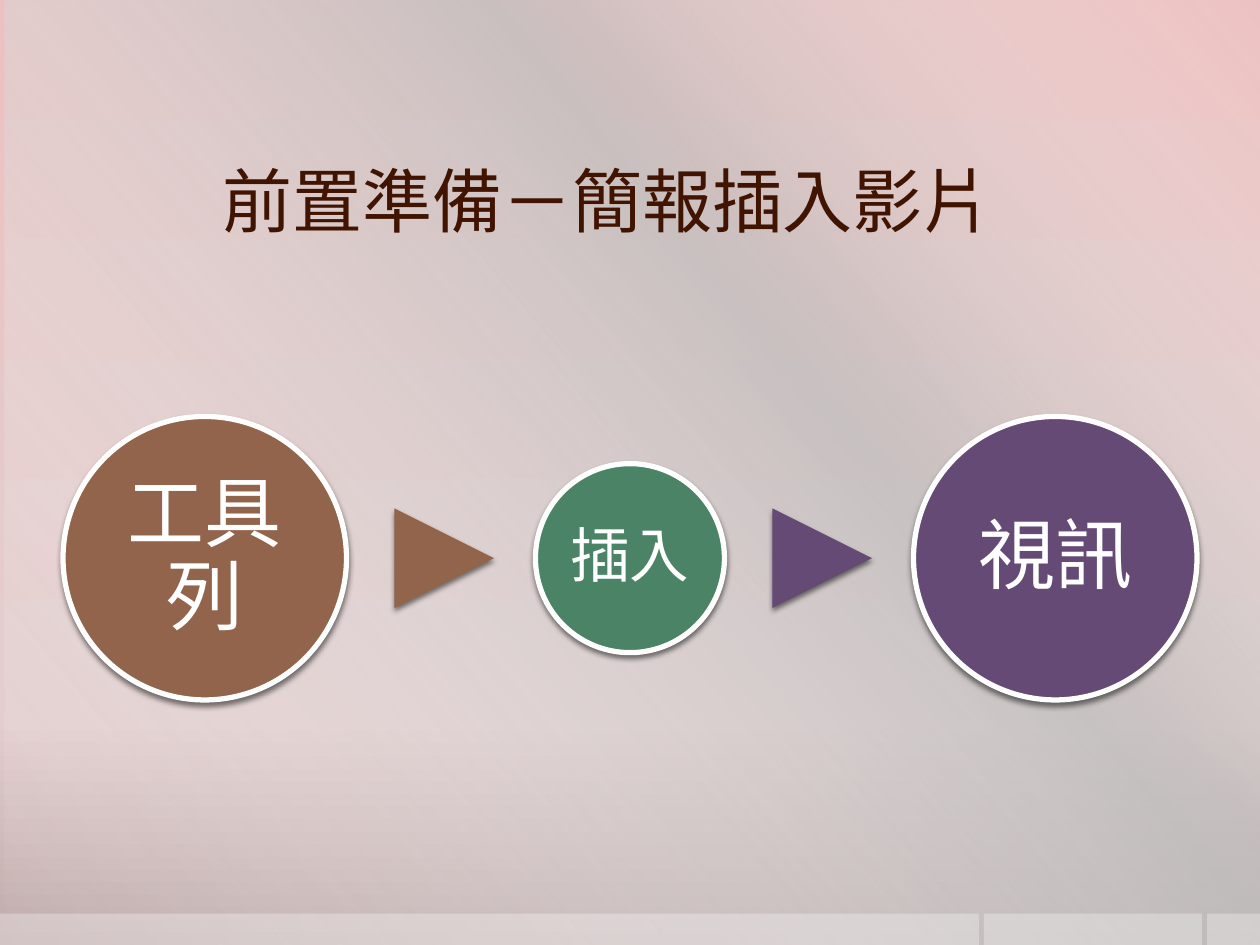
from dataclasses import dataclass

from lxml import etree
from pptx import Presentation
from pptx.dml.color import RGBColor
from pptx.enum.shapes import MSO_SHAPE
from pptx.enum.text import MSO_ANCHOR, PP_ALIGN
from pptx.oxml.ns import qn
from pptx.util import Inches, Pt

RECT, OVAL, TRIANGLE = MSO_SHAPE.RECTANGLE, MSO_SHAPE.OVAL, MSO_SHAPE.ISOSCELES_TRIANGLE
MIDDLE = MSO_ANCHOR.MIDDLE
LEFT, CENTER = PP_ALIGN.LEFT, PP_ALIGN.CENTER


@dataclass(frozen=True)
class Theme:
    white: str = "FFFFFF"
    title: str = "411401"
    brown: str = "91644B"
    green: str = "4B8366"
    purple: str = "654A76"
    shadow: str = "000000"
    # Gradient stops: position %, colour, opacity %
    backdrop: tuple = ((0, "EDC1C1", 100), (76, "E3CDCD", 100), (100, "BFABAB", 100))
    sheen: tuple = ((0, "FFFFFF", 0), (34, "BFBFBF", 61),
                    (38, "BFBFBF", 76), (100, "FFFFFF", 0))
    latin: str = "Calibri"
    cjk: str = "Noto Sans CJK SC"
    title_size: int = 40
    large_size: int = 44
    small_size: int = 34


THEME = Theme()


def add_color(parent, color, opacity):
    clr = etree.SubElement(parent, qn("a:srgbClr"), val=color)
    if opacity < 100:
        etree.SubElement(clr, qn("a:alpha"), val=str(opacity * 1000))


def set_gradient(fill, element, stops, angle):
    fill.gradient()
    grad = next(element.iter(qn("a:gradFill")))
    for child in list(grad):
        grad.remove(child)
    gs_list = etree.SubElement(grad, qn("a:gsLst"))
    for pos, color, opacity in stops:
        gs = etree.SubElement(gs_list, qn("a:gs"), pos=str(pos * 1000))
        add_color(gs, color, opacity)
    etree.SubElement(grad, qn("a:lin"), ang=str(angle * 60000), scaled="0")


def add_shape(s, kind, x, y, w, h, color=None, opacity=100):
    sp = s.shapes.add_shape(kind, Inches(x), Inches(y), Inches(w), Inches(h))
    sp.shadow.inherit = False
    sp.line.fill.background()
    if color:
        sp.fill.solid()
        sp.fill.fore_color.rgb = RGBColor.from_string(color)
        if opacity < 100:
            clr = sp._element.spPr.find(qn("a:solidFill")).find(qn("a:srgbClr"))
            etree.SubElement(clr, qn("a:alpha"), val=str(opacity * 1000))
    return sp


def add_shadow(sp):
    effects = sp._element.spPr.find(qn("a:effectLst"))
    shadow = etree.SubElement(effects, qn("a:outerShdw"), blurRad=str(Pt(3)),
                              dist=str(Pt(2)), dir=str(90 * 60000), rotWithShape="0")
    add_color(shadow, THEME.shadow, 50)


def add_text(s, text, box, margins, align, spacing, font, size, color):
    tf = s.shapes.add_textbox(*map(Inches, box)).text_frame
    mx, my = map(Inches, margins)
    frame_format = {"word_wrap": True, "vertical_anchor": MIDDLE, "margin_left": mx,
                    "margin_right": mx, "margin_top": my, "margin_bottom": my}
    for name, value in frame_format.items():
        setattr(tf, name, value)
    p = tf.paragraphs[0]
    p.alignment, p.line_spacing = align, spacing
    r = p.add_run()
    r.text = text
    r.font.name, r.font.size = font, Pt(size)
    r.font.color.rgb = RGBColor.from_string(color)
    # East Asian font and language
    r_pr = r._r.get_or_add_rPr()
    r_pr.set("lang", "zh-TW")
    etree.SubElement(r_pr, qn("a:ea"), typeface=THEME.cjk)


def add_background(s):
    set_gradient(s.background.fill, s._element, THEME.backdrop, 90)
    sheen = add_shape(s, RECT, 0.04, 0, 10, 7.5)
    set_gradient(sheen.fill, sheen._element, THEME.sheen, 140)
    # Translucent footer panels
    for x, w in ((9.58, 0.42), (7.81, 1.73), (0, 7.77)):
        add_shape(s, RECT, x, 7.25, w, 0.25, THEME.white, 30)


def add_step(s, text, x, middle, size, color, font_size, margin):
    circle = add_shape(s, OVAL, x, middle - size / 2, size, size, color)
    circle.line.color.rgb = RGBColor.from_string(THEME.white)
    circle.line.width = Pt(3)
    add_shadow(circle)
    # Label fills the square inscribed in the circle
    side = size / 2 ** 0.5
    inset = (size - side) / 2
    add_text(s, text, (x + inset, middle - side / 2, side, side), (margin, margin),
             CENTER, 0.9, THEME.latin, font_size, THEME.white)


def add_arrow(s, x, middle, color):
    size = 0.79
    arrow = add_shape(s, TRIANGLE, x, middle - size / 2, size, size, color)
    arrow.rotation = 90
    add_shadow(arrow)


def add_flow(s):
    steps = (("工具列", 2.25, THEME.brown, THEME.large_size, 0.06, THEME.brown),
             ("插入", 1.5, THEME.green, THEME.small_size, 0.05, THEME.purple),
             ("視訊", 2.25, THEME.purple, THEME.large_size, 0.06, None))
    x, middle, gap, arrow_offset = 0.5, 4.43, 1.5, 0.38
    for text, size, color, font_size, margin, arrow_color in steps:
        add_step(s, text, x, middle, size, color, font_size, margin)
        x += size
        if arrow_color:
            add_arrow(s, x + arrow_offset, middle, arrow_color)
        x += gap


def main():
    prs = Presentation()
    prs.slide_width, prs.slide_height = Inches(10), Inches(7.5)
    s = prs.slides.add_slide(prs.slide_layouts[6])
    add_background(s)
    # Title
    add_text(s, "前置準備－簡報插入影片", (1.77, 1.08, 7.73, 1), (0, 0.05),
             LEFT, 1.0, THEME.cjk, THEME.title_size, THEME.title)
    # Three steps joined by arrows
    add_flow(s)
    prs.save("out.pptx")


if __name__ == "__main__":
    main()
